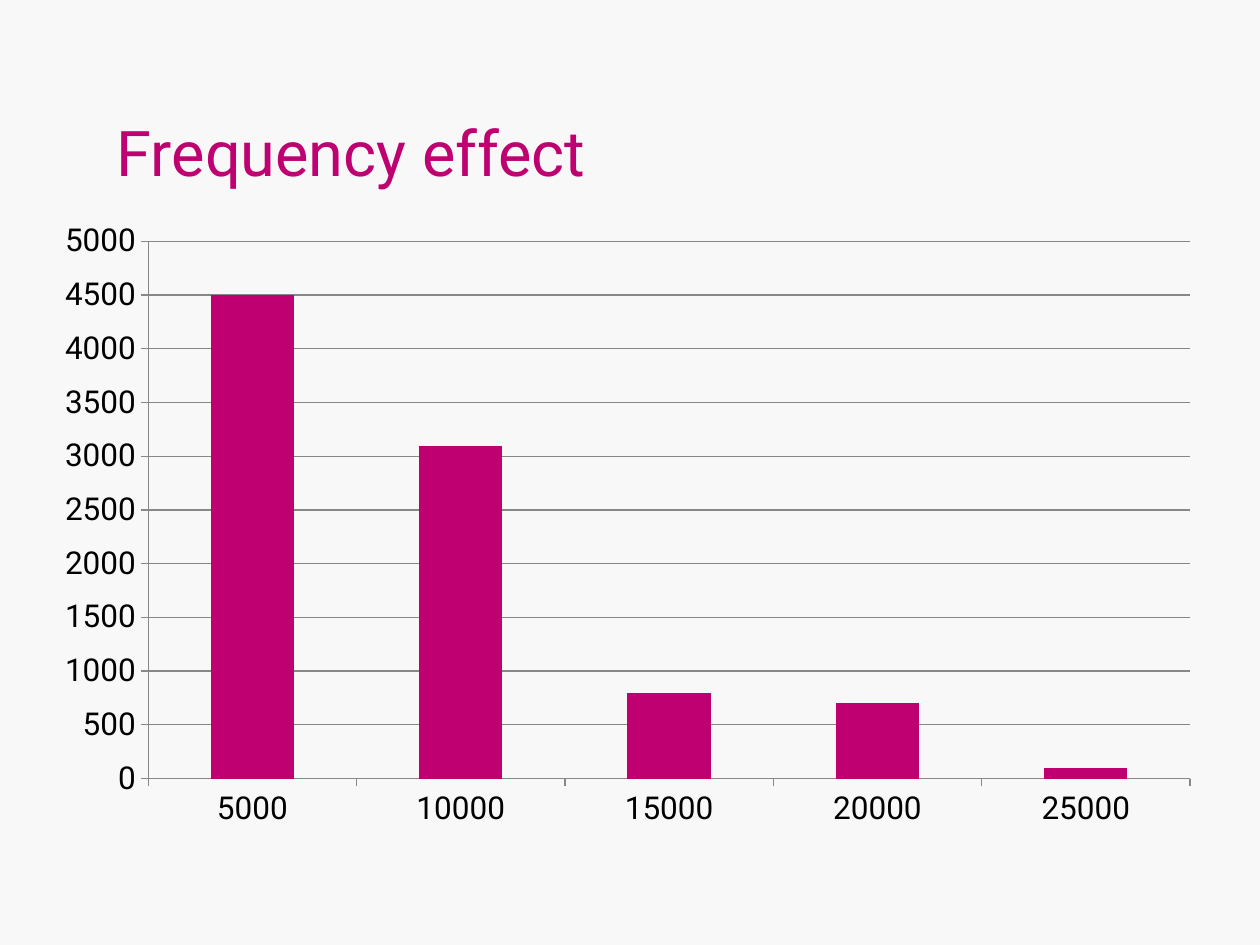
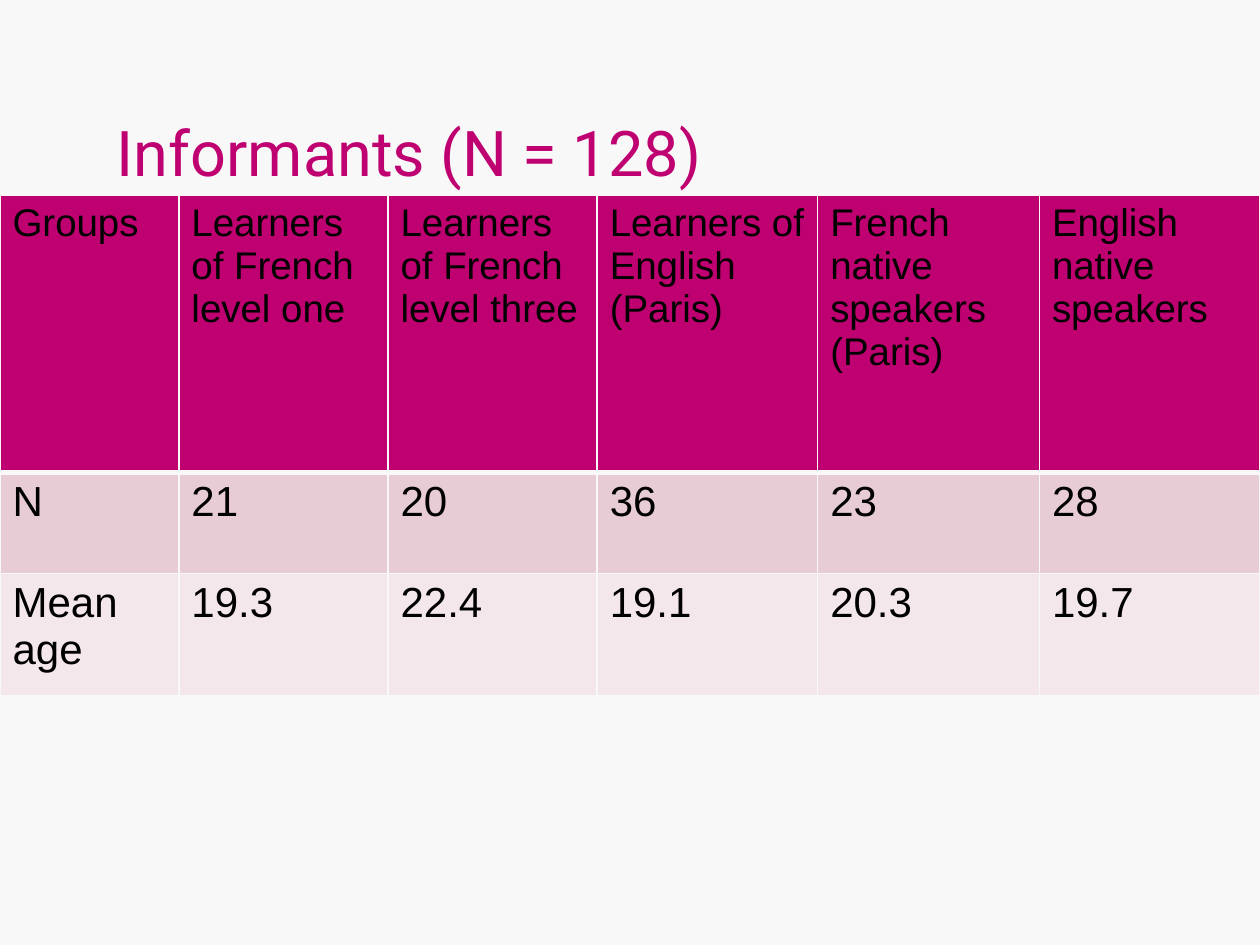
from dataclasses import dataclass

from lxml import etree
from pptx import Presentation
from pptx.chart.data import CategoryChartData
from pptx.dml.color import RGBColor
from pptx.enum.chart import XL_CHART_TYPE, XL_TICK_MARK
from pptx.enum.text import MSO_ANCHOR
from pptx.oxml.ns import qn
from pptx.util import Inches, Pt

COLUMN_CLUSTERED = XL_CHART_TYPE.COLUMN_CLUSTERED
TICK_OUTSIDE = XL_TICK_MARK.OUTSIDE
ANCHOR_BOTTOM = MSO_ANCHOR.BOTTOM
BLANK_LAYOUT = 6


@dataclass(frozen=True)
class Theme:
    background: str = "F8F8F8"
    accent: str = "BF0071"
    text: str = "000000"
    axis: str = "878787"
    bands: tuple = ("E8CCD5", "F4E7EB")
    main_font: str = "Roboto"
    table_font: str = "Arial"
    title_size: int = 36
    chart_size: int = 18
    header_size: int = 22
    body_size: int = 24


def rgb(value):
    return RGBColor.from_string(value)


class SlideBuilder:
    def __init__(self, deck, theme):
        self.deck = deck
        self.theme = theme
        self.page = None

    def new_page(self, title):
        self.page = self.deck.slides.add_slide(self.deck.slide_layouts[BLANK_LAYOUT])
        fill = self.page.background.fill
        fill.solid()
        fill.fore_color.rgb = rgb(self.theme.background)
        self.add_title(title)

    def style_font(self, font, name, size, color):
        font.name = name
        font.size = Pt(size)
        font.color.rgb = rgb(color)

    def add_title(self, text):
        box = self.page.shapes.add_textbox(
            Inches(0.83), Inches(0.3), Inches(6.77), Inches(1.25))
        frame = box.text_frame
        frame.word_wrap = True
        frame.vertical_anchor = ANCHOR_BOTTOM
        span = frame.paragraphs[0].add_run()
        span.text = text
        self.style_font(span.font, self.theme.main_font,
                        self.theme.title_size, self.theme.accent)

    def add_column_chart(self, left, top, width, height, categories, values):
        data = CategoryChartData()
        data.categories = categories
        data.add_series("Series 1", values)
        chart = self.page.shapes.add_chart(
            COLUMN_CLUSTERED, Inches(left), Inches(top),
            Inches(width), Inches(height), data).chart
        self.style_font(chart.font, self.theme.main_font,
                        self.theme.chart_size, self.theme.text)
        chart.has_legend = False
        chart.has_title = False

        # Columns
        plot = chart.plots[0]
        plot.gap_width = 150
        plot.vary_by_categories = False
        fill = plot.series[0].format.fill
        fill.solid()
        fill.fore_color.rgb = rgb(self.theme.accent)

        # Axes and gridlines
        value_axis = chart.value_axis
        value_axis.minimum_scale = 0
        value_axis.maximum_scale = 5000
        value_axis.major_unit = 500
        value_axis.has_major_gridlines = True
        for axis in (chart.category_axis, value_axis):
            axis.major_tick_mark = TICK_OUTSIDE
        for part in (chart.category_axis, value_axis, value_axis.major_gridlines):
            part.format.line.color.rgb = rgb(self.theme.axis)
            part.format.line.width = Pt(0.75)

    def add_table(self, left, top, widths, heights, rows):
        frame = self.page.shapes.add_table(
            len(rows), len(widths), Inches(left), Inches(top),
            Inches(sum(widths)), Inches(sum(heights)))
        table = frame.table
        for column, width in zip(table.columns, widths):
            column.width = Inches(width)
        for index, (row, height, texts) in enumerate(zip(table.rows, heights, rows)):
            row.height = Inches(height)
            is_header = index == 0
            color = self.theme.accent if is_header else self.theme.bands[index - 1]
            size = self.theme.header_size if is_header else self.theme.body_size
            for cell, text in zip(row.cells, texts):
                self.fill_cell(cell, text, size, color)
                self.add_borders(cell, 3 if is_header else 1, 3 if index == 1 else 1)

    def fill_cell(self, cell, text, size, color):
        for index, line in enumerate(text.split("\n")):
            frame = cell.text_frame
            para = frame.paragraphs[0] if index == 0 else frame.add_paragraph()
            span = para.add_run()
            span.text = line
            self.style_font(span.font, self.theme.table_font, size, self.theme.text)
        cell.fill.solid()
        cell.fill.fore_color.rgb = rgb(color)

    def add_borders(self, cell, bottom, top):
        properties = cell._tc.get_or_add_tcPr()
        sides = (("a:lnL", 1), ("a:lnR", 1), ("a:lnT", top), ("a:lnB", bottom))
        for position, (tag, width) in enumerate(sides):
            line = etree.Element(qn(tag), w=str(Pt(width)))
            fill = etree.SubElement(line, qn("a:solidFill"))
            etree.SubElement(fill, qn("a:srgbClr"), val=self.theme.background)
            properties.insert(position, line)


def main():
    deck = Presentation()
    deck.slide_width = Inches(10)
    deck.slide_height = Inches(7.5)
    builder = SlideBuilder(deck, Theme())

    # Frequency chart
    builder.new_page("Frequency effect")
    builder.add_column_chart(
        0.33, 1.67, 9.3, 5,
        [str(frequency) for frequency in range(5000, 25001, 5000)],
        [4500, 3100, 800, 700, 100])

    # Informant groups
    builder.new_page("Informants (N = 128)")
    builder.add_table(
        0, 1.55, [1.42, 1.66, 1.66, 1.75, 1.76, 1.75], [2.2, 0.8, 0.97],
        [["Groups", "Learners of French\nlevel one", "Learners of French level three",
          "Learners of English (Paris)", "French native speakers (Paris)",
          "English native speakers"],
         ["N", "21", "20", "36", "23", "28"],
         ["Mean age", "19.3", "22.4", "19.1", "20.3", "19.7"]])

    deck.save("out.pptx")


if __name__ == "__main__":
    main()
